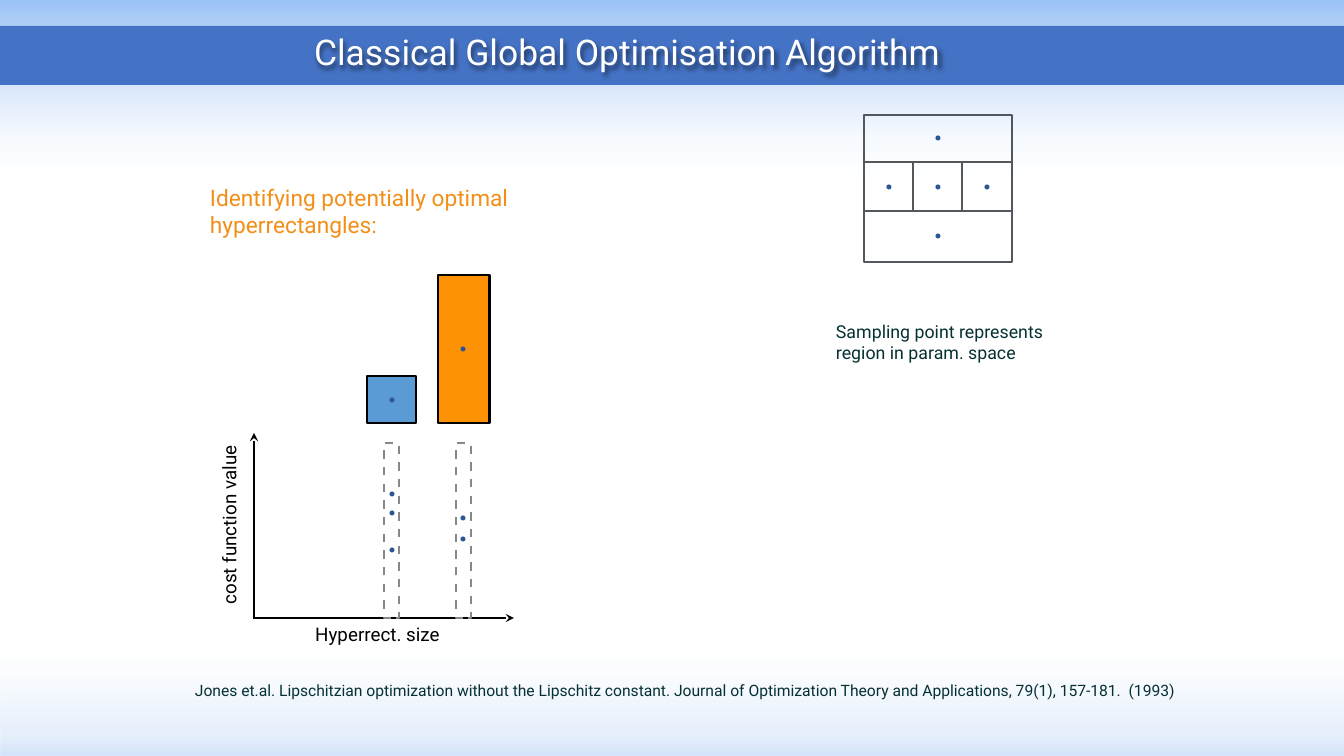
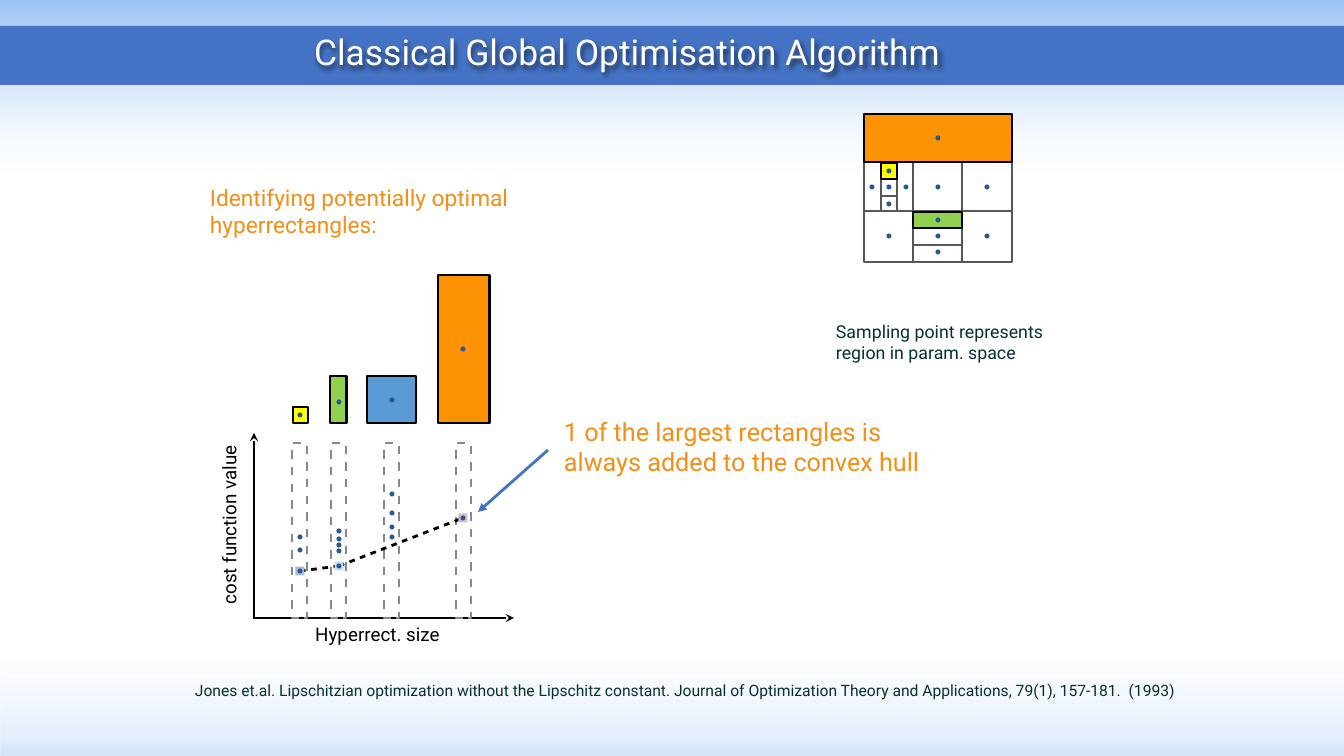
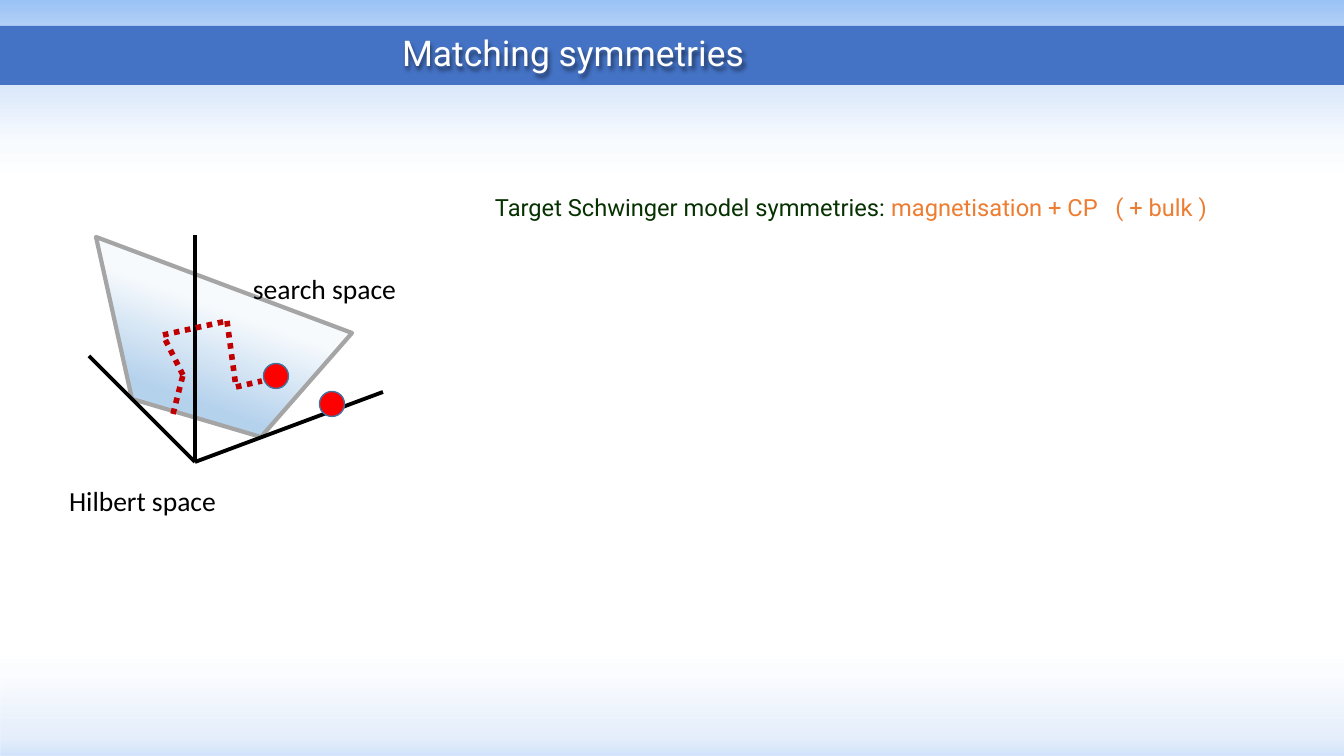
import itertools

import pptx
import pptx.dml.color
import pptx.enum.shapes
import pptx.enum.text
import pptx.oxml
import pptx.oxml.ns
import pptx.util

SCALE = 12192000 / 1344  # EMU per px
SHAPE = pptx.enum.shapes.MSO_SHAPE
ALIGN = pptx.enum.text.PP_ALIGN
NAMESPACE = pptx.oxml.ns.nsdecls("a")

COLOURS = {
    "bar": "4472C4", "white": "FFFFFF", "black": "000000", "grid": "53585F",
    "dot": "2B5696", "strip": "85888D", "orange": "FC9204", "blue": "5B9BD5",
    "green": "92D050", "yellow": "FFFF00", "heading": "F38F18", "note": "063133",
    "target": "063100", "accent": "ED7D31", "plane": "A5A5A5", "red": "FF0000",
    "ring": "43739E", "path": "C00000", "pink": "DDBAC3", "steel": "A6BDD6",
    "sky": "C8DDEF",
}

# Shared bands: box, rotation, gradient stops (position, colour, opacity)
GRADIENT_BANDS = [
    ((0, 655, 1344, 101), 180,
     [(0, "B9D6F9", 66), (16, "C2D8F8", 45), (85, "F8FBFE", 40), (100, "FFFFFF", 100)]),
    ((0, 0, 1344, 183), 0,
     [(0, "9AC3F5", 100), (23, "C2D8F8", 100), (78, "F8FBFE", 100), (100, "FFFFFF", 100)]),
]
TITLE_BAR = (0, 26, 1344, 59)

# Content of the two optimisation slides
OPTIMISATION_TITLE = "Classical Global Optimisation Algorithm"
OPTIMISATION_TEXTS = [  # box, text, size, colour, alignment, rotation
    ((191, 677, 1036, 27),
     "Jones et.al. Lipschitzian optimization without the Lipschitz constant. "
     "Journal of Optimization Theory and Applications, 79(1), 157-181.  (1993)",
     11.2, "note", ALIGN.LEFT, 0),
    ((206, 180, 357, 62), "Identifying potentially optimal hyperrectangles:",
     16.2, "heading", ALIGN.LEFT, 0),
    ((832, 317, 217, 50), "Sampling point represents region in param. space",
     12.7, "note", ALIGN.LEFT, 0),
    ((299, 619, 157, 30), "Hyperrect. size", 13.4, "black", ALIGN.CENTER, 0),
    ((131, 510, 196, 30), "cost function value", 13.4, "black", ALIGN.CENTER, 270),
]
CALLOUT = ["1 of the largest rectangles is", "always added to the convex hull"]
AXES = [((254, 619), (254, 433)), ((253, 618), (514, 618))]
MAP_LEFT, MAP_TOP, CELL = 864, 113, 49
MAP_X = [MAP_LEFT + CELL * i for i in range(4)]
MAP_Y = [MAP_TOP + CELL * i for i in range(4)]
MID_X = [x + 25 for x in MAP_X[:3]]
MID_Y = [y + 25 for y in MAP_Y[:3]]
BAR_BOTTOM = 423
SIZE_CLASSES = {  # hyperrectangle left, width, height; dot; strip left
    "yellow": (293, 15, 16, (300, 415), 292),
    "green": (330, 17, 47, (339, 402), 331),
    "blue": (367, 49, 47, (392, 400), 384),
    "orange": (438, 52, 148, (463, 349), 456),
}

GRID = [((MAP_X[0], y), (MAP_X[3], y)) for y in MAP_Y[1:3]]
GRID += [((x, MAP_Y[1]), (x, MAP_Y[2])) for x in MAP_X[1:3]]
SUBGRID = [((x, MAP_Y[2]), (x, 262)) for x in MAP_X[1:3]]
SUBGRID += [((x, MAP_Y[1]), (x, MAP_Y[2])) for x in (881, 897)]
SUBGRID += [((881, y), (897, y)) for y in (179, 196)]
SUBGRID += [((MAP_X[1], y), (MAP_X[2], y)) for y in (228, 245)]

FIRST_STEP = {
    "grid": GRID,
    "regions": [],
    "map dots": [(MID_X[1], y) for y in MID_Y] + [(x, MID_Y[1]) for x in MID_X[::2]],
    "costs": {"blue": [494, 513, 550], "orange": [518, 539]},
    "hull": [],
}
LATER_STEP = {
    "grid": GRID + SUBGRID,
    "regions": [((864, 114, 148, 48), "orange"), ((913, 212, 49, 16), "green"),
                ((881, 163, 16, 16), "yellow")],
    "map dots": list(itertools.product(MID_X, MID_Y[1:])) + [
        (MID_X[1], MID_Y[0]), (889, 171), (889, 204), (872, 187), (906, 187),
        (938, 220), (938, 252)],
    "costs": {"yellow": [537, 550, 571], "green": [531, 539, 545, 551, 566],
              "blue": [494, 513, 527, 537], "orange": [518]},
    "hull": [((300, 571), "steel"), ((339, 566), "sky"), ((463, 518), "pink")],
}

# Content of the symmetry slide
SEARCH_PLANE = [(132, 399), (261, 437), (352, 333), (96, 237)]
PLANE_STOPS = [(40, "F7FAFD", 100), (76, "B5D2EC", 100), (79, "B5D2EC", 100),
               (100, "CEE1F2", 100)]
ORIGIN = (195, 462)
HILBERT_AXES = [(195, 235), (383, 392), (89, 356)]
SEARCH_PATH = [(173, 414), (183, 375), (163, 335), (227, 321), (236, 387), (262, 381)]
STATES = [(276, 376), (332, 404)]
SPACE_LABELS = [((35, 479, 215, 47), "Hilbert space"), ((217, 267, 215, 47), "search space")]
TARGET = [("Target Schwinger model symmetries: ", "target"),
          ("magnetisation + CP   ( + bulk )", "accent")]


def emu(*lengths):
    return [round(length * SCALE) for length in lengths]


def rgb(name):
    return pptx.dml.color.RGBColor.from_string(COLOURS[name])


def xml(text):
    return pptx.oxml.parse_xml(text)


def style_shape(shape, fill=None, line=None, width=1):
    shape.shadow.inherit = False
    if fill:
        shape.fill.solid()
        shape.fill.fore_color.rgb = rgb(fill)
    else:
        shape.fill.background()
    if line:
        shape.line.color.rgb = rgb(line)
        shape.line.width = pptx.util.Pt(width)
    else:
        shape.line.fill.background()
    return shape


def add_box(slide, box, fill=None, line=None, width=1, kind=SHAPE.RECTANGLE):
    return style_shape(slide.shapes.add_shape(kind, *emu(*box)), fill, line, width)


def add_centred(slide, centre, size, fill, line=None, kind=SHAPE.OVAL):
    x, y = centre
    return add_box(slide, (x - size / 2, y - size / 2, size, size), fill, line, kind=kind)


def set_gradient(shape, stops, angle):
    stop_xml = "".join(
        f'<a:gs pos="{position * 1000}"><a:srgbClr val="{colour}">'
        f'<a:alpha val="{opacity * 1000}"/></a:srgbClr></a:gs>'
        for position, colour, opacity in stops)
    properties = shape.element.spPr
    properties.replace(properties.find(pptx.oxml.ns.qn("a:noFill")), xml(
        f'<a:gradFill {NAMESPACE} rotWithShape="1"><a:gsLst>{stop_xml}</a:gsLst>'
        f'<a:lin ang="{angle * 60000}" scaled="0"/></a:gradFill>'))


def set_dash(shape, percent):
    shape.line._get_or_add_ln().append(xml(
        f'<a:custDash {NAMESPACE}><a:ds d="{percent * 1000}" sp="{percent * 1000}"/></a:custDash>'))


def add_line(slide, start, end, colour, width=2, dash=None, preset=None, head=None):
    line = slide.shapes.add_connector(
        pptx.enum.shapes.MSO_CONNECTOR.STRAIGHT, *emu(*start, *end))
    line.line.color.rgb = rgb(colour)
    line.line.width = pptx.util.Pt(width)
    outline = line.line._get_or_add_ln()
    if dash:
        set_dash(line, dash)
    if preset:
        outline.append(xml(f'<a:prstDash {NAMESPACE} val="{preset}"/>'))
    if head:
        outline.append(xml(f'<a:tailEnd {NAMESPACE} type="{head}"/>'))
    line.element.spPr.append(xml(f"<a:effectLst {NAMESPACE}/>"))


def style_frame(frame, side_inset=4):
    frame.word_wrap = True
    frame.auto_size = pptx.enum.text.MSO_AUTO_SIZE.NONE
    frame.vertical_anchor = pptx.enum.text.MSO_ANCHOR.MIDDLE
    frame.margin_left = frame.margin_right = emu(side_inset)[0]
    frame.margin_top = frame.margin_bottom = emu(4)[0]


def style_paragraph(paragraph, size, colour=None, font="Roboto", alignment=ALIGN.LEFT, spacing=None):
    paragraph.alignment = alignment
    if spacing:
        paragraph.line_spacing = spacing
    paragraph.font.size = pptx.util.Pt(size)
    paragraph.font.name = font
    if colour:
        paragraph.font.color.rgb = rgb(colour)


def add_text(slide, box, lines, size, colour, alignment=ALIGN.LEFT, rotation=0,
             font="Roboto", spacing=None, side_inset=4):
    text_box = slide.shapes.add_textbox(*emu(*box))
    text_box.rotation = rotation
    frame = text_box.text_frame
    style_frame(frame, side_inset)
    frame.text = "\n".join(lines)
    for paragraph in frame.paragraphs:
        style_paragraph(paragraph, size, colour, font, alignment, spacing)


def add_bands(slide, layout):
    """Draw the bands and move them to the layout, behind its placeholders."""
    bands = []
    for box, rotation, stops in GRADIENT_BANDS:
        band = add_box(slide, box)
        band.rotation = rotation
        set_gradient(band, stops, 90)
        bands.append(band)
    bands.append(add_box(slide, TITLE_BAR, "bar"))
    first_placeholder = layout.placeholders[0].element
    for number, band in enumerate(bands, 101):
        band.element.nvSpPr.cNvPr.set("id", str(number))
        first_placeholder.addprevious(band.element)


def set_title(slide, box, text):
    title = slide.shapes.title
    title.left, title.top, title.width, title.height = emu(*box)
    style_frame(title.text_frame)
    title.text_frame.text = text
    paragraph = title.text_frame.paragraphs[0]
    paragraph._p.get_or_add_pPr().set("indent", str(emu(18)[0]))
    style_paragraph(paragraph, 25.3, "white")
    title.element.spPr.append(xml(
        f'<a:effectLst {NAMESPACE}><a:outerShdw blurRad="38100" dist="38100" dir="3600000" '
        'rotWithShape="0"><a:srgbClr val="000000"><a:alpha val="50000"/></a:srgbClr>'
        '</a:outerShdw></a:effectLst>'))


def draw_optimisation(slide, step):
    set_title(slide, (292, 21, 658, 60), OPTIMISATION_TITLE)
    for box, text, size, colour, alignment, rotation in OPTIMISATION_TEXTS:
        add_text(slide, box, [text], size, colour, alignment, rotation)

    # Map of the parameter space
    add_box(slide, (864, 115, 148, 147), line="grid", width=2)
    for start, end in step["grid"]:
        add_line(slide, start, end, "grid")
    for box, colour in step["regions"]:
        add_box(slide, box, colour, "black", 2)
    dots = list(step["map dots"])

    # Size classes above the plot, with a strip for each
    for start, end in AXES:
        add_line(slide, start, end, "black", head="stealth")
    for colour, costs in step["costs"].items():
        left, width, height, dot, strip_left = SIZE_CLASSES[colour]
        add_box(slide, (left, BAR_BOTTOM - height, width, height), colour, "black", 2)
        strip = add_box(slide, (strip_left, 443, 15, 175), line="strip")
        set_dash(strip, 600)
        dots += [dot] + [(dot[0], cost) for cost in costs]

    # Convex hull
    for (start, _), (end, _) in itertools.pairwise(step["hull"]):
        add_line(slide, start, end, "black", dash=200)
    for centre, colour in step["hull"]:
        add_centred(slide, centre, 9, colour, kind=SHAPE.RECTANGLE)

    for centre in dots:
        add_centred(slide, centre, 5, "dot")


def draw_callout(slide):
    add_line(slide, (548, 450), (478, 512), "bar", head="triangle")
    add_text(slide, (560, 412, 389, 69), CALLOUT, 18, "heading")


def draw_symmetries(slide):
    set_title(slide, (380, 22, 539, 60), "Matching symmetries")

    # Search space inside the Hilbert space
    builder = slide.shapes.build_freeform(*SEARCH_PLANE[0], scale=SCALE)
    builder.add_line_segments(SEARCH_PLANE[1:], close=True)
    plane = style_shape(builder.convert_to_shape(), line="plane", width=3)
    set_gradient(plane, PLANE_STOPS, 110)
    for end in HILBERT_AXES:
        add_line(slide, ORIGIN, end, "black", 2.75)
    for box, text in SPACE_LABELS:
        add_text(slide, box, [text], 19.7, "black", ALIGN.CENTER,
                 font="Calibri", spacing=0.9, side_inset=7)
    for centre in STATES:
        add_centred(slide, centre, 25, "red", "ring")
    for start, end in itertools.pairwise(SEARCH_PATH):
        add_line(slide, start, end, "path", 4, preset="sysDot")

    # Target symmetries in two colours
    text_box = slide.shapes.add_textbox(*emu(491, 183, 805, 42))
    style_frame(text_box.text_frame)
    paragraph = text_box.text_frame.paragraphs[0]
    style_paragraph(paragraph, 16.9, spacing=1.2)
    for text, colour in TARGET:
        run = paragraph.add_run()
        run.text = text
        run.font.color.rgb = rgb(colour)


def main():
    presentation = pptx.Presentation()
    presentation.slide_width, presentation.slide_height = emu(1344, 756)
    layout = presentation.slide_layouts[5]
    first, later, symmetries = [presentation.slides.add_slide(layout) for _ in range(3)]
    add_bands(first, layout)
    draw_optimisation(first, FIRST_STEP)
    draw_optimisation(later, LATER_STEP)
    draw_callout(later)
    draw_symmetries(symmetries)
    presentation.save("out.pptx")


if __name__ == "__main__":
    main()
